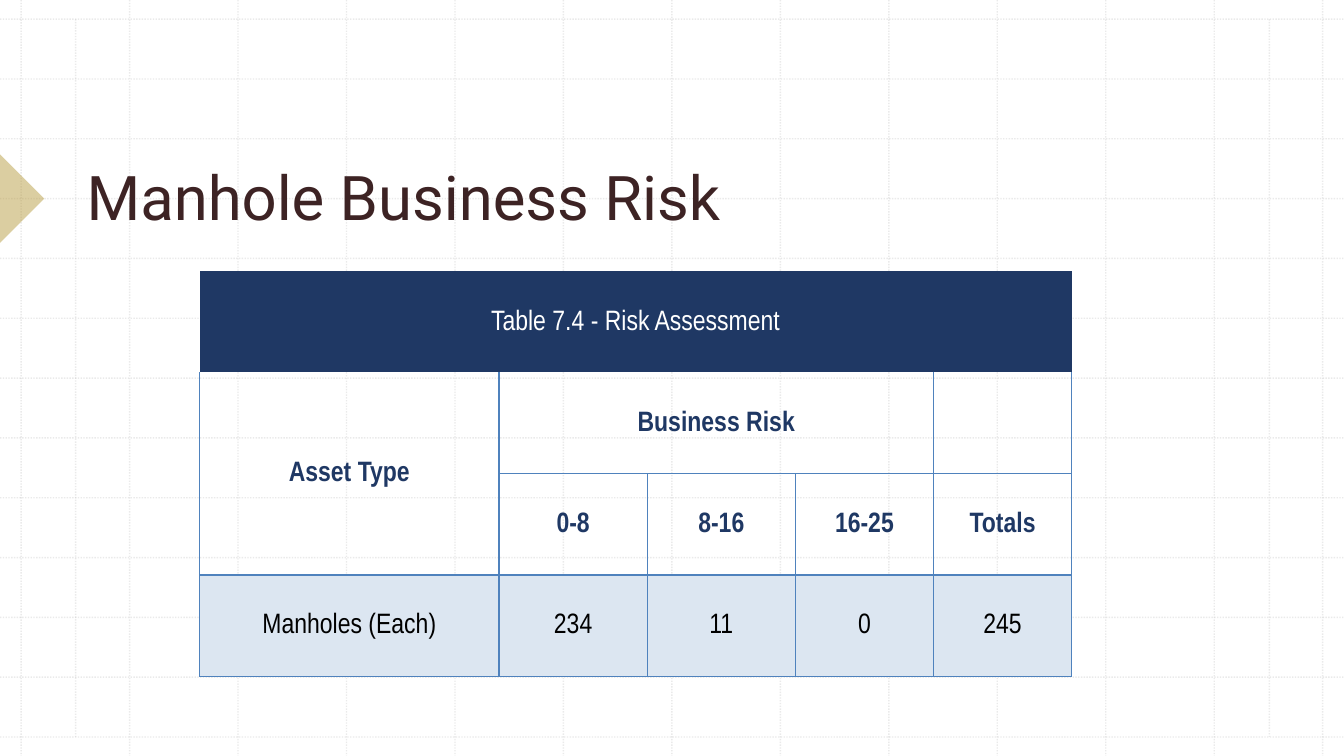
from lxml import etree
from pptx import Presentation
from pptx.dml.color import RGBColor
from pptx.enum import shapes, text, dml
from pptx.oxml.ns import qn
from pptx.util import Inches, Pt

TITLE = "Manhole Business Risk"
ROWS = [
    ["Table 7.4 - Risk Assessment", "", "", "", ""],
    ["Asset Type", "Business Risk", "", "", ""],
    ["", "0-8", "8-16", "16-25", "Totals"],
    ["Manholes (Each)", "234", "11", "0", "245"],
]
MERGES = [((0, 0), (0, 4)), ((1, 0), (2, 0)), ((1, 1), (1, 3))]
COLUMN_WIDTHS = [2.97, 1.47, 1.47, 1.37, 1.37]
TABLE_LEFT, TABLE_TOP, TABLE_HEIGHT = 1.98, 2.69, 4.02
COLORS = {"grid": "BCBCBC", "marker": "B99E44", "title": "3D2324", "navy": "1F3864",
          "white": "FFFFFF", "black": "000000", "pale": "DCE6F1", "border": "4F82BD"}
# (font colour, bold, fill) for each table row
ROW_STYLES = [("white", False, "navy"), ("navy", True, None),
              ("navy", True, None), ("black", False, "pale")]
WIDTH, HEIGHT = 13.33, 7.5


def rgb(name):
    return RGBColor.from_string(COLORS[name])


def set_alpha(fill_parent, percent):
    color = next(fill_parent.iter(qn("a:srgbClr")))
    etree.SubElement(color, qn("a:alpha")).set("val", str(percent * 1000))


def add_grid_line(page, x1, y1, x2, y2):
    line = page.shapes.add_connector(shapes.MSO_CONNECTOR.STRAIGHT,
                                     Inches(x1), Inches(y1), Inches(x2), Inches(y2))
    line.line.color.rgb = rgb("grid")
    line.line.width = Pt(1)
    line.line.dash_style = dml.MSO_LINE.ROUND_DOT
    properties = line._element.spPr
    set_alpha(properties, 30)
    etree.SubElement(properties, qn("a:effectLst"))


def add_grid(page):
    for i in range(13):
        x = 0.21 + i * 1.0757
        add_grid_line(page, x, 0, x, HEIGHT)
        y = 0.19 + i * 0.5935
        add_grid_line(page, 0, y, WIDTH, y)
    for x in (0.75, 12.59):
        add_grid_line(page, x, 0.19, x, 7.31)


def add_marker(page):
    marker = page.shapes.add_shape(shapes.MSO_SHAPE.RIGHT_TRIANGLE,
                                   Inches(-0.31), Inches(1.66), Inches(0.62), Inches(0.62))
    marker.rotation = 225
    marker.shadow.inherit = False
    marker.fill.solid()
    marker.fill.fore_color.rgb = rgb("marker")
    set_alpha(marker._element.spPr, 50)
    marker.line.fill.background()


def format_text(para, font, size, color, bold=False):
    for span in para.runs:
        span.font.name = font
        span.font.size = Pt(size)
        span.font.bold = bold
        span.font.color.rgb = rgb(color)


def add_title(page):
    box = page.shapes.add_textbox(Inches(0.76), Inches(0.79), Inches(11.29), Inches(1.58))
    frame = box.text_frame
    frame.word_wrap = True
    frame.vertical_anchor = text.MSO_ANCHOR.BOTTOM
    frame.text = TITLE
    para = frame.paragraphs[0]
    para.line_spacing = 0.9
    format_text(para, "Roboto", 44, "title")


def set_borders(cell, visible_sides):
    """Draw the named sides (letters of LRTB) and clear the others."""
    properties = cell._tc.get_or_add_tcPr()
    for index, side in enumerate("LRTB"):
        border = etree.Element(qn(f"a:ln{side}"), w=str(Pt(1)))
        if side in visible_sides:
            fill = etree.SubElement(border, qn("a:solidFill"))
            etree.SubElement(fill, qn("a:srgbClr"), val=COLORS["border"])
        else:
            etree.SubElement(border, qn("a:noFill"))
        properties.insert(index, border)


def visible_sides(row, column):
    if row == 0:
        return ""
    if row == 1:
        return {0: "LR", 1: "LB", 2: "B", 3: "RB"}.get(column, "LRB")
    if (row, column) == (2, 0):
        return "LRB"
    return "LRTB"


def format_cell(cell, value, color, bold, fill):
    cell.vertical_anchor = text.MSO_ANCHOR.MIDDLE
    cell.margin_left = cell.margin_right = Inches(0.07)
    cell.margin_top = cell.margin_bottom = 0
    if fill:
        cell.fill.solid()
        cell.fill.fore_color.rgb = rgb(fill)
    else:
        cell.fill.background()
    if value:
        cell.text_frame.text = value
        para = cell.text_frame.paragraphs[0]
        para.alignment = text.PP_ALIGN.CENTER
        para.line_spacing = 1.07
        para.space_before = para.space_after = Pt(4)
        format_text(para, "Arial Narrow", 20, color, bold)


def add_risk_table(page):
    table = page.shapes.add_table(len(ROWS), len(COLUMN_WIDTHS),
                                  Inches(TABLE_LEFT), Inches(TABLE_TOP),
                                  Inches(sum(COLUMN_WIDTHS)), Inches(TABLE_HEIGHT)).table
    table.first_row = table.horz_banding = False
    for column, width in zip(table.columns, COLUMN_WIDTHS):
        column.width = Inches(width)
    for r, (values, style) in enumerate(zip(ROWS, ROW_STYLES)):
        table.rows[r].height = Inches(TABLE_HEIGHT / len(ROWS))
        for c, value in enumerate(values):
            format_cell(table.cell(r, c), value, *style)
            set_borders(table.cell(r, c), visible_sides(r, c))
    for first, last in MERGES:
        table.cell(*first).merge(table.cell(*last))


def main():
    deck = Presentation()
    deck.slide_width, deck.slide_height = Inches(WIDTH), Inches(HEIGHT)
    page = deck.slides.add_slide(deck.slide_layouts[6])
    add_grid(page)
    add_marker(page)
    add_title(page)
    add_risk_table(page)
    deck.save("out.pptx")


if __name__ == "__main__":
    main()
